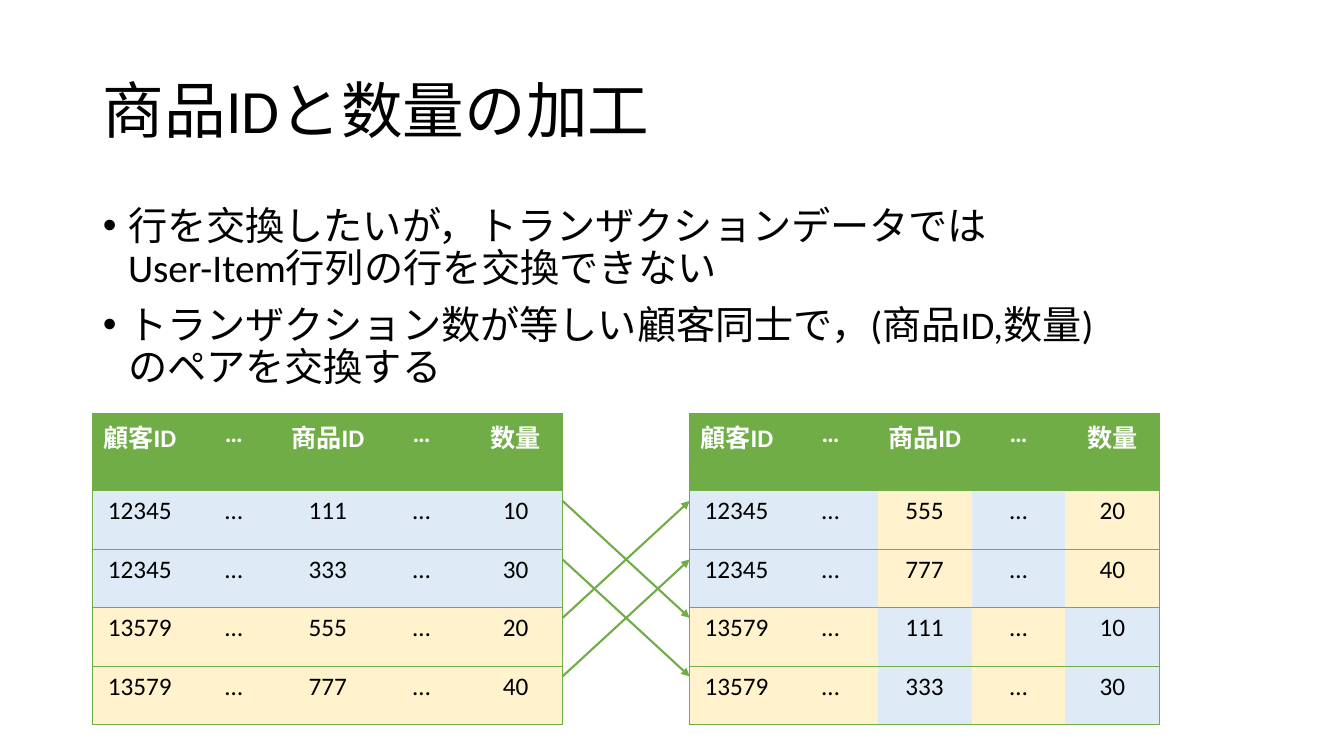
import dataclasses

import lxml.etree
import pptx
import pptx.dml.color
import pptx.enum.shapes
import pptx.enum.text
import pptx.oxml.ns
import pptx.util


@dataclasses.dataclass(frozen=True)
class Theme:
    font: str = "Calibri"
    title_size: int = 44
    body_size: int = 28
    table_size: int = 18
    text: str = "000000"
    header_text: str = "FFFFFF"
    accent: str = "70AD47"
    first_customer: str = "DEEBF7"
    second_customer: str = "FFF2CC"
    border_width: float = 0.5
    arrow_width: float = 1.5


THEME = Theme()

# Grid, in inches
SLIDE_WIDTH, SLIDE_HEIGHT = 13.33, 7.5
MARGIN = 0.92
CONTENT_WIDTH = SLIDE_WIDTH - 2 * MARGIN
TABLE_TOP = 4.1
TABLE_WIDTH = 4.66
TABLE_GAP = 1.26
ROW_HEIGHT = 0.58
RIGHT_TABLE_LEFT = MARGIN + TABLE_WIDTH + TABLE_GAP
FIRST_ARROW = TABLE_TOP + 1.5 * ROW_HEIGHT

# Content
HEADER = ["顧客ID", "…", "商品ID", "…", "数量"]
CUSTOMERS = ["12345", "12345", "13579", "13579"]
PAIRS = [("111", "10"), ("333", "30"), ("555", "20"), ("777", "40")]
SWAPPED_ORDER = [2, 3, 0, 1]
PAIR_COLUMNS = (2, 4)
BULLETS = [
    "行を交換したいが，トランザクションデータでは\vUser-Item行列の行を交換できない",
    "トランザクション数が等しい顧客同士で，(商品ID,数量)\vのペアを交換する",
]


def inches(*lengths):
    return [pptx.util.Inches(length) for length in lengths]


def color(value):
    return pptx.dml.color.RGBColor.from_string(value)


def add_xml(parent, tag, **attributes):
    return lxml.etree.SubElement(parent, pptx.oxml.ns.qn(tag), attributes)


def format_paragraph(paragraph, size, text_color, alignment, bold=False):
    paragraph.alignment = alignment
    paragraph.font.name = THEME.font
    paragraph.font.size = pptx.util.Pt(size)
    paragraph.font.bold = bold
    paragraph.font.color.rgb = color(text_color)


def place(shape, left, top, width, height):
    shape.left, shape.top, shape.width, shape.height = inches(left, top, width, height)


def fill_title(shape, text):
    place(shape, MARGIN, 0.4, CONTENT_WIDTH, 1.45)
    shape.text_frame.text = text
    shape.text_frame.vertical_anchor = pptx.enum.text.MSO_ANCHOR.MIDDLE
    paragraph = shape.text_frame.paragraphs[0]
    format_paragraph(paragraph, THEME.title_size, THEME.text, pptx.enum.text.PP_ALIGN.LEFT)
    paragraph.line_spacing = 0.9


def fill_bullets(shape, texts):
    place(shape, MARGIN, 2, CONTENT_WIDTH, 1.95)
    shape.text_frame.text = "\n".join(texts)
    indent = pptx.util.Inches(0.25)
    for paragraph in shape.text_frame.paragraphs:
        format_paragraph(paragraph, THEME.body_size, THEME.text, pptx.enum.text.PP_ALIGN.LEFT)
        paragraph.line_spacing = 0.9
        paragraph.space_before = pptx.util.Pt(10)
        properties = paragraph._p.get_or_add_pPr()
        properties.set("marL", str(indent))
        properties.set("indent", str(-indent))
        add_xml(properties, "a:buFont", typeface="Arial")
        add_xml(properties, "a:buChar", char="•")
        # Bullets must come before the default run properties
        properties.append(properties.find(pptx.oxml.ns.qn("a:defRPr")))


def set_borders(cell, visible_sides):
    properties = cell._tc.get_or_add_tcPr()
    for side in "LRTB":
        width = str(pptx.util.Pt(THEME.border_width))
        line = add_xml(properties, f"a:ln{side}", w=width)
        if side in visible_sides:
            add_xml(add_xml(line, "a:solidFill"), "a:srgbClr", val=THEME.accent)
        else:
            add_xml(line, "a:noFill")


def add_transactions(slide, left, order):
    """Draw the table with its pairs in the given order, coloured by their owner."""
    owner_fills = {
        CUSTOMERS[0]: THEME.first_customer,
        CUSTOMERS[-1]: THEME.second_customer,
    }
    rows = [(HEADER, [THEME.accent] * len(HEADER))]
    for customer, source in zip(CUSTOMERS, order):
        product, quantity = PAIRS[source]
        owners = [CUSTOMERS[source] if column in PAIR_COLUMNS else customer
                  for column in range(len(HEADER))]
        rows.append(([customer, "…", product, "…", quantity],
                     [owner_fills[owner] for owner in owners]))

    frame = slide.shapes.add_table(
        len(rows), len(HEADER),
        *inches(left, TABLE_TOP, TABLE_WIDTH, ROW_HEIGHT * len(rows)))
    last_column = len(HEADER) - 1
    for row, (texts, fills) in enumerate(rows):
        is_header = row == 0
        for column, (text, fill) in enumerate(zip(texts, fills)):
            cell = frame.table.cell(row, column)
            cell.text = text
            format_paragraph(
                cell.text_frame.paragraphs[0], THEME.table_size,
                THEME.header_text if is_header else THEME.text,
                pptx.enum.text.PP_ALIGN.CENTER, is_header)
            set_borders(cell, "TB" + "L" * (column == 0) + "R" * (column == last_column))
            cell.fill.solid()
            cell.fill.fore_color.rgb = color(fill)


def add_arrow(slide, start_row, end_row):
    start, end = (FIRST_ARROW + ROW_HEIGHT * row for row in (start_row, end_row))
    arrow = slide.shapes.add_connector(
        pptx.enum.shapes.MSO_CONNECTOR.STRAIGHT,
        *inches(MARGIN + TABLE_WIDTH, start, RIGHT_TABLE_LEFT, end))
    arrow.line.color.rgb = color(THEME.accent)
    arrow.line.width = pptx.util.Pt(THEME.arrow_width)
    add_xml(arrow.line._get_or_add_ln(), "a:tailEnd", type="triangle")
    add_xml(arrow._element.spPr, "a:effectLst")


def main():
    presentation = pptx.Presentation()
    presentation.slide_width, presentation.slide_height = inches(SLIDE_WIDTH, SLIDE_HEIGHT)
    slide = presentation.slides.add_slide(presentation.slide_layouts[1])

    # Title and explanation
    fill_title(slide.shapes.title, "商品IDと数量の加工")
    fill_bullets(slide.placeholders[1], BULLETS)

    # Transactions before and after the exchange
    add_transactions(slide, MARGIN, range(len(PAIRS)))
    add_transactions(slide, RIGHT_TABLE_LEFT, SWAPPED_ORDER)

    # Arrows from each pair to its new row
    for end_row, start_row in enumerate(SWAPPED_ORDER):
        add_arrow(slide, start_row, end_row)

    presentation.save("out.pptx")


if __name__ == "__main__":
    main()
